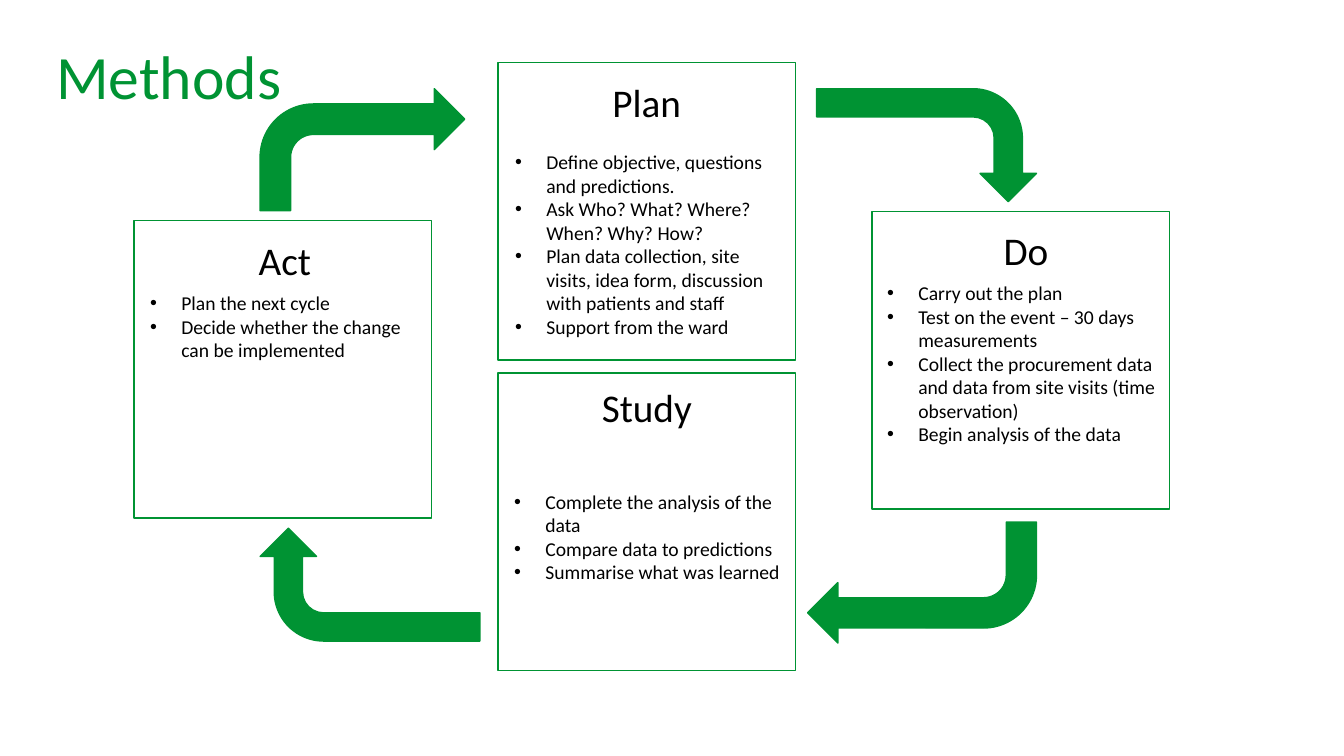
from lxml import etree
from pptx import Presentation
from pptx.dml.color import RGBColor
from pptx.enum.shapes import MSO_SHAPE as Shape
from pptx.enum.text import MSO_ANCHOR as Anchor, PP_ALIGN as Align
from pptx.oxml.ns import qn
from pptx.util import Inches, Pt

GREEN = RGBColor(0x00, 0x93, 0x33)
BLACK = RGBColor(0x00, 0x00, 0x00)
CARD_SIZE = 2.95

# Each card: left, top, heading and its frame, points and their frame
CARDS = [
    (4.94, 0.62, "Plan", (5.01, 0.73, 2.81, 0.57),
     ["Define objective, questions and predictions.",
      "Ask Who? What? Where? When? Why? How?",
      "Plan data collection, site visits, idea form, discussion with patients and staff",
      "Support from the ward"], (5.01, 1.44, 2.81, 1.99)),
    (8.65, 2.1, "Do", (8.77, 2.2, 2.81, 0.57),
     ["Carry out the plan",
      "Test on the event – 30 days measurements",
      "Collect the procurement data and data from site visits (time observation)",
      "Begin analysis of the data"], (8.7, 2.74, 2.96, 1.75)),
    (4.94, 3.7, "Study", (5.01, 3.75, 2.81, 0.57),
     ["Complete the analysis of the data",
      "Compare data to predictions",
      "Summarise what was learned"], (5, 4.81, 2.88, 1.04)),
    (1.33, 2.19, "Act", (1.45, 2.3, 2.75, 0.57),
     ["Plan the next cycle",
      "Decide whether the change can be implemented"], (1.39, 2.84, 2.86, 0.81)),
]

# Each arrow: left, top, width, height before rotation, then the rotation
ARROWS = [
    (8.63, 0.35, 1.12, 2.18, 90),
    (3.11, 4.71, 1.12, 2.18, 270),
    (2.58, 0.88, 2.03, 1.21, 0),
    (8.01, 5.18, 2.27, 1.2, 180),
]


def add_text(lines, frame, size, color=BLACK, align=Align.LEFT,
             anchor=Anchor.TOP, spacing=1.0, bullets=False):
    box = page.shapes.add_textbox(*map(Inches, frame))
    text = box.text_frame
    text.word_wrap = True
    text.vertical_anchor = anchor
    for index, line in enumerate(lines):
        para = text.add_paragraph() if index else text.paragraphs[0]
        para.alignment = align
        para.line_spacing = spacing
        if bullets:
            props = para._p.get_or_add_pPr()
            props.set("marL", str(Inches(0.31)))
            props.set("indent", str(-Inches(0.31)))
            etree.SubElement(props, qn("a:buFont")).set("typeface", "Arial")
            etree.SubElement(props, qn("a:buChar")).set("char", "•")
        span = para.add_run()
        span.text = line
        span.font.name = "Calibri"
        span.font.size = Pt(size)
        span.font.color.rgb = color


def add_green_shape(kind, frame, filled=False, rotation=0):
    shape = page.shapes.add_shape(kind, *map(Inches, frame))
    shape.shadow.inherit = False
    shape.rotation = rotation
    shape.line.color.rgb = GREEN
    shape.line.width = Pt(1)
    if filled:
        shape.fill.solid()
        shape.fill.fore_color.rgb = GREEN
    else:
        shape.fill.background()


deck = Presentation()
deck.slide_width = Inches(13.33)
deck.slide_height = Inches(7.5)
page = deck.slides.add_slide(deck.slide_layouts[6])

add_text(["Methods"], (0.46, 0.34, 11.5, 0.89), 44, color=GREEN,
         anchor=Anchor.MIDDLE, spacing=0.9)

for left, top, heading, heading_frame, points, points_frame in CARDS:
    add_green_shape(Shape.RECTANGLE, (left, top, CARD_SIZE, CARD_SIZE))
    add_text([heading], heading_frame, 28, align=Align.CENTER)
    add_text(points, points_frame, 14, bullets=True)

for *frame, rotation in ARROWS:
    add_green_shape(Shape.BENT_ARROW, frame, filled=True, rotation=rotation)

deck.save("out.pptx")
